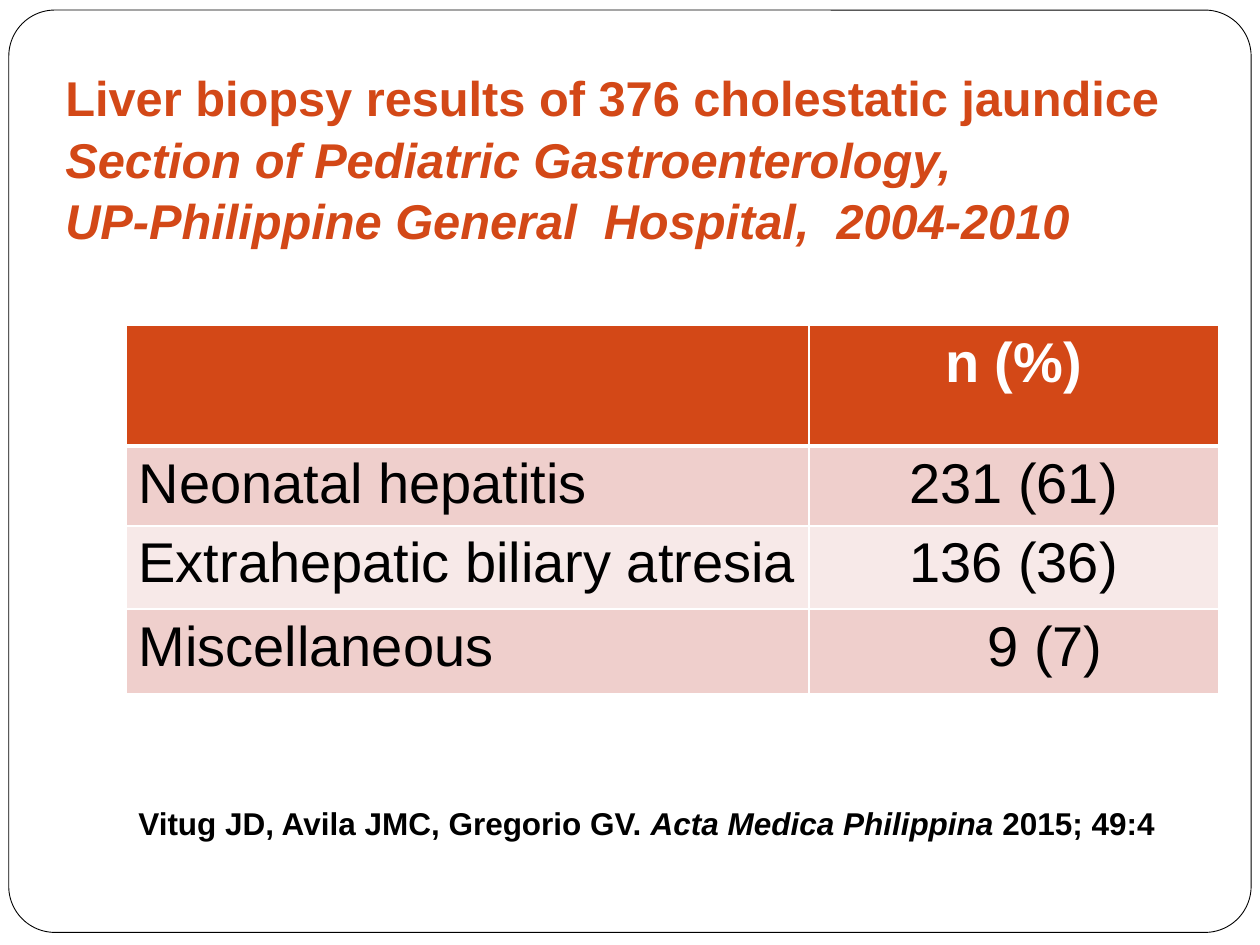
from lxml import etree
from pptx import Presentation
from pptx.dml.color import RGBColor
from pptx.enum import shapes, text
from pptx.oxml import ns
from pptx.util import Inches, Pt

FONT = "Arial"
ORANGE, WHITE, BLACK = "D34817", "FFFFFF", "000000"
BANDS = ["EFCFCC", "F7E9E8"]

ROWS = [
    ("", "n (%)"),
    ("Neonatal hepatitis", "231 (61)"),
    ("Extrahepatic biliary atresia", "136 (36)"),
    ("Miscellaneous", "9 (7)"),
]
COLUMN_WIDTHS = [5.42, 3.25]
ROW_HEIGHTS = [0.96, 0.62, 0.66, 0.67]


def color(value):
    return RGBColor.from_string(value)


def style_span(span, size, value, bold=False, italic=False):
    font = span.font
    font.name, font.size = FONT, Pt(size)
    font.bold, font.italic = bold, italic
    font.color.rgb = color(value)


def add_frame(page):
    frame = page.shapes.add_shape(
        shapes.MSO_SHAPE.ROUNDED_RECTANGLE,
        Inches(0.07), Inches(0.08), Inches(9.86), Inches(7.32))
    frame.adjustments[0] = 0.05
    frame.shadow.inherit = False
    frame.fill.solid()
    frame.fill.fore_color.rgb = color(WHITE)
    frame.line.color.rgb = color(BLACK)
    frame.line.width = Pt(0.5)


def add_text(page, left, top, width, height, lines, size, value):
    """Each line is a list of (wording, italic) pairs; all text is bold."""
    box = page.shapes.add_textbox(
        Inches(left), Inches(top), Inches(width), Inches(height))
    box.text_frame.word_wrap = True
    para = box.text_frame.paragraphs[0]
    for number, line in enumerate(lines):
        if number:
            para.add_line_break()
        for wording, italic in line:
            span = para.add_run()
            span.text = wording
            style_span(span, size, value, bold=True, italic=italic)
    return box


def set_border(cell, side, width):
    properties = cell._tc.get_or_add_tcPr()
    line = etree.SubElement(properties, ns.qn(f"a:ln{side}"), w=str(Pt(width)))
    fill = etree.SubElement(line, ns.qn("a:solidFill"))
    etree.SubElement(fill, ns.qn("a:srgbClr"), val=WHITE)


def fill_cell(cell, wording, row, column):
    header = row == 0
    # Borders come before the fill in the cell properties
    for side in "LRTB":
        heavy = (header and side == "B") or (row == 1 and side == "T")
        set_border(cell, side, 3 if heavy else 1)
    cell.fill.solid()
    cell.fill.fore_color.rgb = color(ORANGE if header else BANDS[(row - 1) % 2])
    cell.text_frame.text = wording
    para = cell.text_frame.paragraphs[0]
    if column == 1:
        para.alignment = text.PP_ALIGN.CENTER
    for span in para.runs:
        style_span(span, 32, WHITE if header else BLACK, bold=header)


def add_results_table(page):
    table = page.shapes.add_table(
        len(ROWS), len(COLUMN_WIDTHS), Inches(1), Inches(2.58),
        Inches(sum(COLUMN_WIDTHS)), Inches(sum(ROW_HEIGHTS))).table
    table.horz_banding = False
    for column, width in zip(table.columns, COLUMN_WIDTHS):
        column.width = Inches(width)
    for row, height in zip(table.rows, ROW_HEIGHTS):
        row.height = Inches(height)
    for row, wordings in enumerate(ROWS):
        for column, wording in enumerate(wordings):
            fill_cell(table.cell(row, column), wording, row, column)
    # The single-digit count is shifted right to line up with those above
    table.cell(len(ROWS) - 1, 1).margin_left = Inches(0.6)


def main():
    deck = Presentation()
    deck.slide_width, deck.slide_height = Inches(10), Inches(7.5)
    page = deck.slides.add_slide(deck.slide_layouts[6])

    add_frame(page)

    # Title
    title = add_text(page, 0.42, 0.5, 9.42, 1.58, [
        [("Liver biopsy results of 376 cholestatic jaundice", False)],
        [("Section of Pediatric Gastroenterology,", True)],
        [("UP-Philippine General  Hospital,  2004-2010", True)],
    ], 27.9, ORANGE)
    title.text_frame.vertical_anchor = text.MSO_ANCHOR.BOTTOM
    title.text_frame.margin_bottom = Inches(0.1)
    title.text_frame.paragraphs[0].line_spacing = 1.05

    add_results_table(page)

    # Citation
    add_text(page, 1, 6.33, 8.5, 0.4, [[
        ("Vitug JD, Avila JMC, Gregorio GV. ", False),
        ("Acta Medica Philippina", True),
        (" 2015; 49:4", False),
    ]], 18, BLACK)

    deck.save("out.pptx")


if __name__ == "__main__":
    main()
